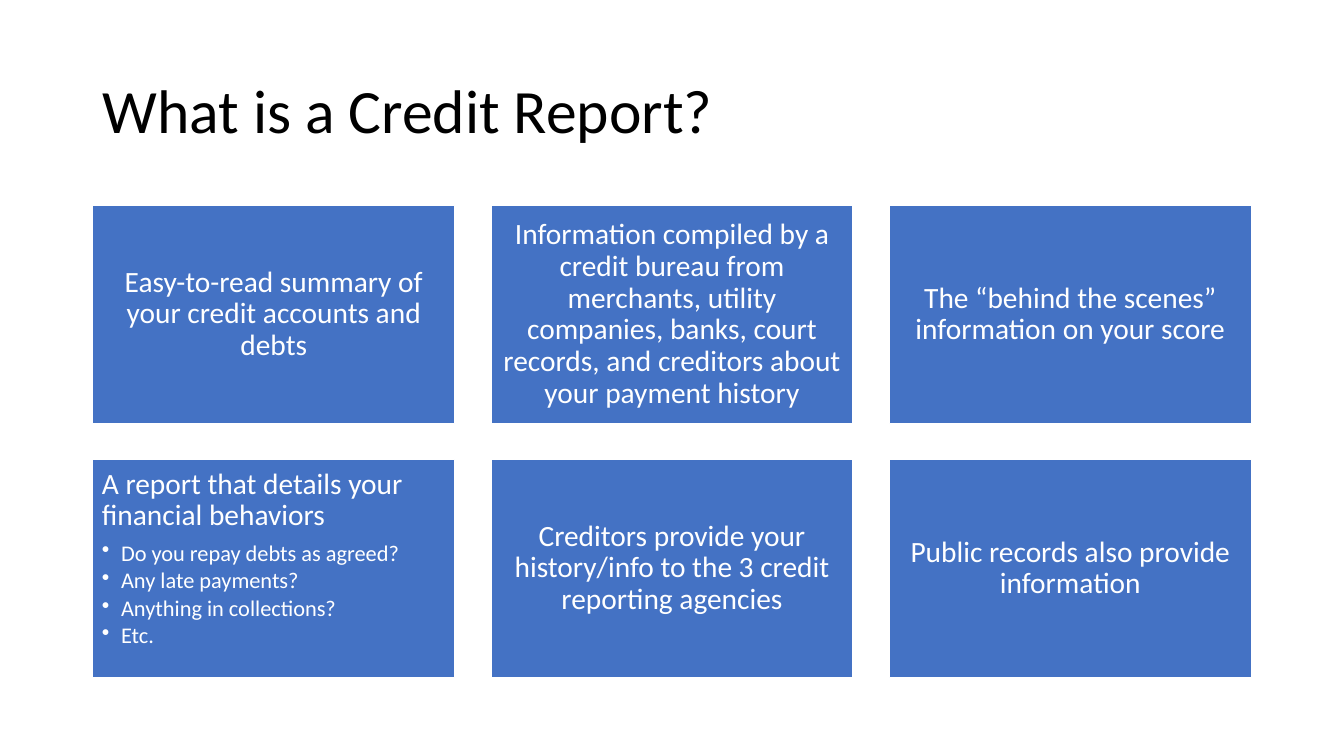
from pptx import Presentation
from pptx.dml.color import RGBColor
from pptx.enum.shapes import MSO_SHAPE
from pptx.enum.text import MSO_ANCHOR, PP_ALIGN
from pptx.util import Inches, Pt
from lxml.etree import SubElement
from pptx.oxml.ns import qn

TITLE = "What is a Credit Report?"
# Each card: statement, bullet points
CARDS = [
    ("Easy-to-read summary of your credit accounts and debts", []),
    ("Information compiled by a credit bureau from merchants, utility companies, "
     "banks, court records, and creditors about your payment history", []),
    ("The “behind the scenes” information on your score", []),
    ("A report that details your financial behaviors",
     ["Do you repay debts as agreed?", "Any late payments?",
      "Anything in collections?", "Etc."]),
    ("Creditors provide your history/info to the 3 credit reporting agencies", []),
    ("Public records also provide information", []),
]

FONT = "Calibri"
BLACK, WHITE, BLUE = "000000", "FFFFFF", "4472C4"
COLUMNS = 3
LEFT, TOP = 0.92, 2.04
CARD_WIDTH, CARD_HEIGHT, GAP = 3.59, 2.16, 0.36
INSET, BULLET_INDENT = 0.09, 0.19


def color(hex_value):
    return RGBColor.from_string(hex_value)


def set_frame(frame, anchor, **margins):
    values = {"word_wrap": True, "vertical_anchor": anchor, **margins}
    for name, value in values.items():
        setattr(frame, name, value)


def write(paragraph, text, size, hex_value, align=PP_ALIGN.LEFT, space_after=0):
    layout = {"alignment": align, "line_spacing": 0.9,
              "space_before": Pt(0), "space_after": Pt(space_after)}
    for name, value in layout.items():
        setattr(paragraph, name, value)
    run = paragraph.add_run()
    run.text = text
    for name, value in {"name": FONT, "size": Pt(size)}.items():
        setattr(run.font, name, value)
    run.font.color.rgb = color(hex_value)


def add_bullet(paragraph):
    properties = paragraph._p.get_or_add_pPr()
    properties.set("marL", str(Inches(BULLET_INDENT)))
    properties.set("indent", str(-Inches(BULLET_INDENT)))
    SubElement(properties, qn("a:buChar"), char="•")


def add_card(slide, index, statement, points):
    row, column = divmod(index, COLUMNS)
    card = slide.shapes.add_shape(
        MSO_SHAPE.RECTANGLE,
        Inches(LEFT + column * (CARD_WIDTH + GAP)),
        Inches(TOP + row * (CARD_HEIGHT + GAP)),
        Inches(CARD_WIDTH), Inches(CARD_HEIGHT))
    card.shadow.inherit = False
    card.fill.solid()
    card.fill.fore_color.rgb = color(BLUE)
    card.line.color.rgb = color(WHITE)
    card.line.width = Pt(1)

    frame = card.text_frame
    margins = {f"margin_{side}": Inches(INSET)
               for side in ("left", "top", "right", "bottom")}
    set_frame(frame, MSO_ANCHOR.TOP if points else MSO_ANCHOR.MIDDLE, **margins)
    write(frame.paragraphs[0], statement, 21, WHITE,
          align=PP_ALIGN.LEFT if points else PP_ALIGN.CENTER,
          space_after=7 if points else 0)
    for point in points:
        paragraph = frame.add_paragraph()
        paragraph.level = 1
        write(paragraph, point, 16, WHITE, space_after=2.4)
        add_bullet(paragraph)


def main():
    deck = Presentation()
    deck.slide_width, deck.slide_height = Inches(13.33), Inches(7.5)
    slide = deck.slides.add_slide(deck.slide_layouts[6])

    title = slide.shapes.add_textbox(
        Inches(LEFT), Inches(0.4), Inches(11.5), Inches(1.45)).text_frame
    set_frame(title, MSO_ANCHOR.MIDDLE)
    write(title.paragraphs[0], TITLE, 44, BLACK)

    for index, (statement, points) in enumerate(CARDS):
        add_card(slide, index, statement, points)
    deck.save("out.pptx")


if __name__ == "__main__":
    main()
